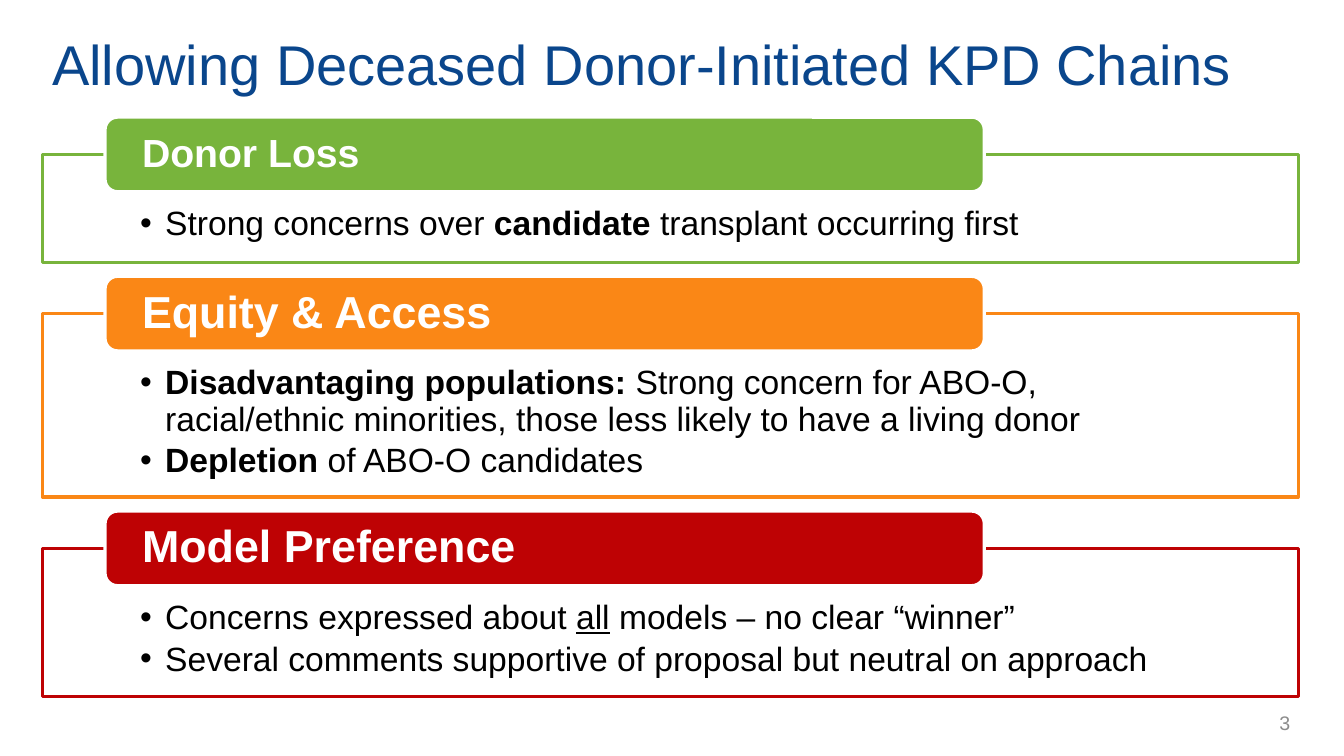
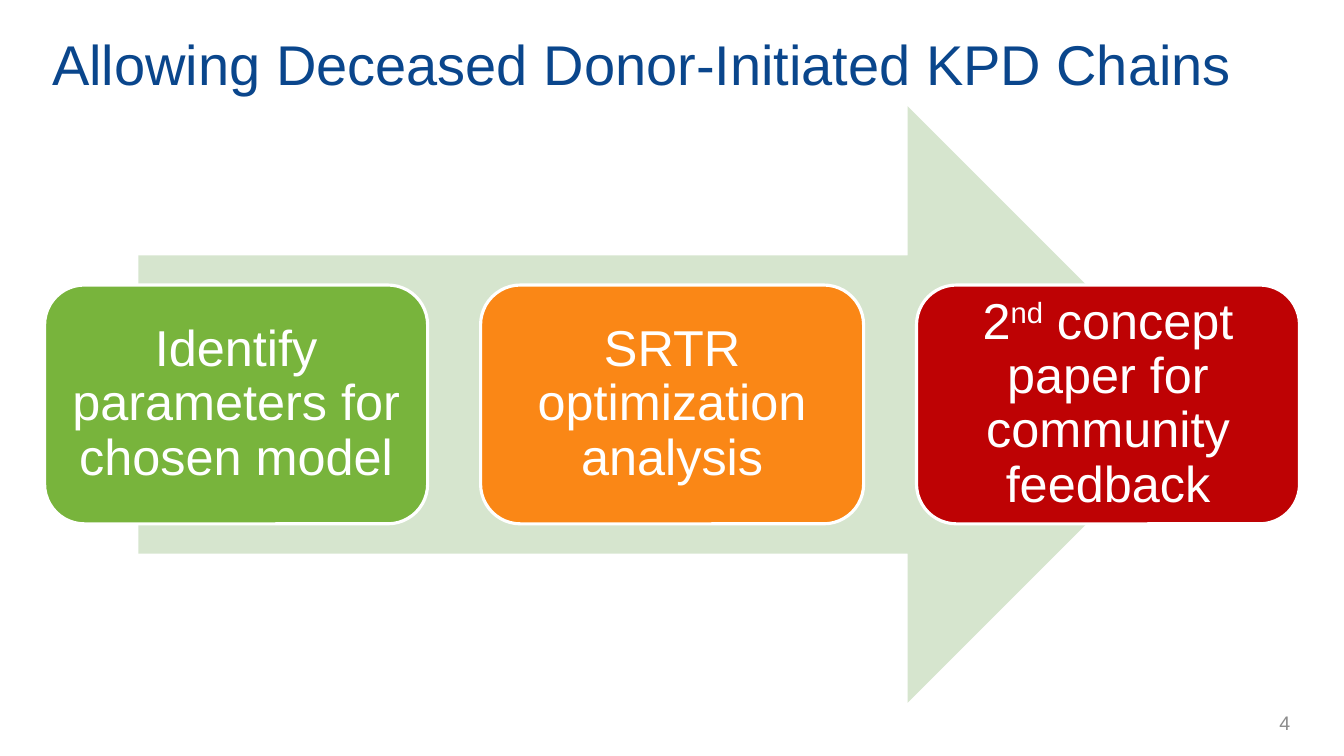
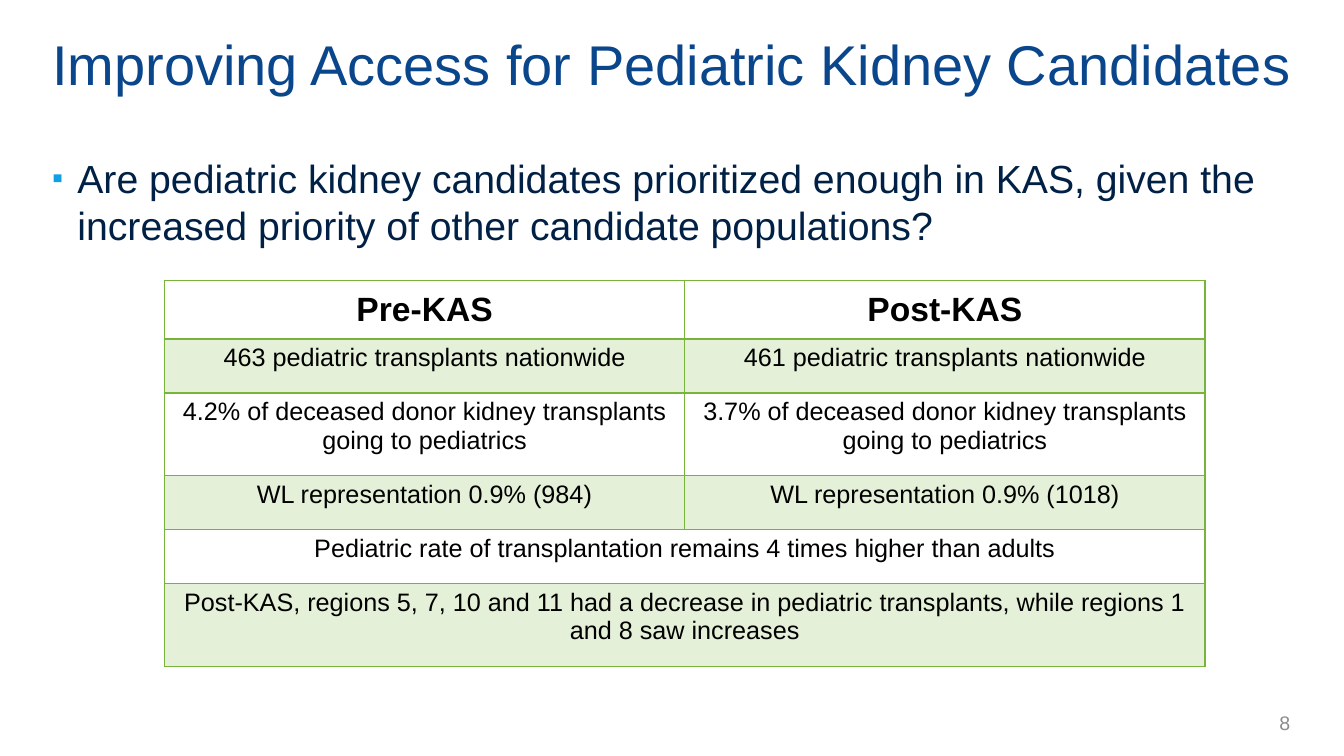
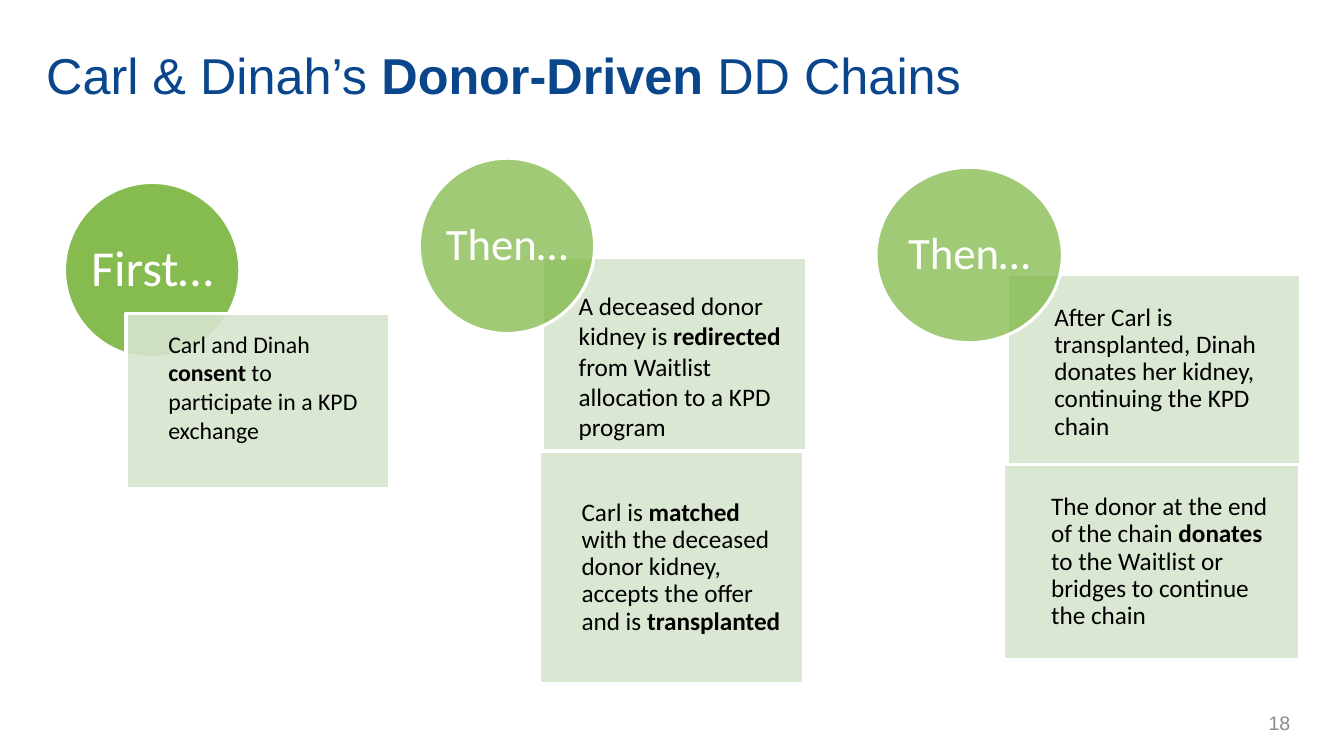
from dataclasses import dataclass
from typing import NamedTuple, Optional

import lxml.etree
import pptx
import pptx.dml.color
import pptx.enum.shapes
import pptx.enum.text
import pptx.oxml
import pptx.oxml.ns
import pptx.util

Pt = pptx.util.Pt
RGBColor = pptx.dml.color.RGBColor
SHAPE = pptx.enum.shapes.MSO_SHAPE
ANCHOR = pptx.enum.text.MSO_ANCHOR
ALIGN = pptx.enum.text.PP_ALIGN
qn = pptx.oxml.ns.qn

NAVY = RGBColor(0x0A, 0x46, 0x8C)
DARK_NAVY = RGBColor(0x00, 0x20, 0x45)
SKY = RGBColor(0x0F, 0xA0, 0xE4)
GREEN = RGBColor(0x78, 0xB4, 0x3C)
ORANGE = RGBColor(0xFA, 0x87, 0x16)
RED = RGBColor(0xBE, 0x02, 0x04)
SAGE = RGBColor(0xD6, 0xE5, 0xCE)
PALE_GREEN = RGBColor(0xE4, 0xF0, 0xD8)
GREY = RGBColor(0x8C, 0x8C, 0x8C)
WHITE = RGBColor(0xFF, 0xFF, 0xFF)
BLACK = RGBColor(0x00, 0x00, 0x00)

LINE_WIDTH = 2.25
TIGHT = 0.9


class Box(NamedTuple):
    left: float
    top: float
    width: float
    height: float

    def lengths(self) -> list:
        return [Pt(v) for v in self]


class Insets(NamedTuple):
    left: float = 7.2
    top: float = 3.6
    right: float = 7.2
    bottom: float = 3.6


class Run(NamedTuple):
    text: str
    bold: bool = False
    underline: bool = False
    superscript: bool = False


class Bullet(NamedTuple):
    char: str
    color: RGBColor
    percent: int = 100


class Style(NamedTuple):
    size: float
    color: RGBColor = BLACK
    font: str = "Arial"
    align: ALIGN = ALIGN.LEFT
    anchor: ANCHOR = ANCHOR.MIDDLE
    insets: Insets = Insets()
    spacing: float = 1.0
    after: float = 0
    bullet: Optional[Bullet] = None


@dataclass
class Section:
    heading: str
    heading_size: float
    color: RGBColor
    height: float
    points: list


@dataclass
class Step:
    runs: list
    color: RGBColor


@dataclass
class Card:
    box: Box
    runs: list
    insets: Insets
    size: float = 18
    spacing: float = TIGHT
    anchor: ANCHOR = ANCHOR.MIDDLE


@dataclass
class Circle:
    box: Box
    label: str
    size: float
    opacity: int


TITLE = Style(40, NAVY)
TITLE_BOX = Box(30.24, 11.5, 917.3, 67)
PAGE_NUMBER = Style(14, GREY, align=ALIGN.RIGHT)
PAGE_NUMBER_BOX = Box(766.1, 501.8, 162.7, 28.8)


def add_bullet(p, bullet: Bullet) -> None:
    pPr = p._p.get_or_add_pPr()
    pPr.set("marL", str(Pt(18)))
    pPr.set("indent", str(-Pt(18)))
    color = lxml.etree.SubElement(pPr, qn("a:buClr"))
    lxml.etree.SubElement(color, qn("a:srgbClr"), val=str(bullet.color))
    lxml.etree.SubElement(pPr, qn("a:buSzPct"), val=str(bullet.percent * 1000))
    lxml.etree.SubElement(pPr, qn("a:buFont"), typeface="Arial")
    lxml.etree.SubElement(pPr, qn("a:buChar"), char=bullet.char)


def write(tf, paragraphs: list, style: Style) -> None:
    for i, runs in enumerate(paragraphs):
        p = tf.add_paragraph() if i else tf.paragraphs[0]
        p.alignment = style.align
        p.line_spacing = style.spacing
        p.space_after = Pt(style.after)
        if style.bullet:
            add_bullet(p, style.bullet)
        for run in runs:
            r = p.add_run()
            r.text = run.text
            r.font.name = style.font
            r.font.size = Pt(style.size)
            r.font.color.rgb = style.color
            r.font.bold = run.bold
            r.font.underline = run.underline
            if run.superscript:
                r._r.get_or_add_rPr().set("baseline", "30000")


def fill_frame(tf, paragraphs: list, style: Style) -> None:
    tf.word_wrap = True
    tf.vertical_anchor = style.anchor
    tf.margin_left, tf.margin_top, tf.margin_right, tf.margin_bottom = [
        Pt(v) for v in style.insets
    ]
    write(tf, paragraphs, style)


def add_text(s, box: Box, paragraphs: list, style: Style) -> None:
    fill_frame(s.shapes.add_textbox(*box.lengths()).text_frame, paragraphs, style)


def add_shape(s, kind: SHAPE, box: Box, fill: RGBColor,
              line: Optional[RGBColor] = WHITE, opacity: int = 100):
    sp = s.shapes.add_shape(kind, *box.lengths())
    sp.shadow.inherit = False
    sp.fill.solid()
    sp.fill.fore_color.rgb = fill
    if opacity < 100:
        clr = sp._element.spPr.find(qn("a:solidFill")).find(qn("a:srgbClr"))
        lxml.etree.SubElement(clr, qn("a:alpha"), val=str(opacity * 1000))
    if line is None:
        sp.line.fill.background()
    else:
        sp.line.color.rgb = line
        sp.line.width = Pt(LINE_WIDTH)
    return sp


def add_slide(prs, title: list, number: int, box: Box = TITLE_BOX, style: Style = TITLE):
    s = prs.slides.add_slide(prs.slide_layouts[6])
    add_text(s, box, [title], style)
    add_text(s, PAGE_NUMBER_BOX, [[Run(str(number))]], PAGE_NUMBER)
    return s


def set_borders(cell, bottom: float, top: float) -> None:
    tcPr = cell._tc.get_or_add_tcPr()
    sides = (("lnL", 1), ("lnR", 1), ("lnT", top), ("lnB", bottom))
    for i, (side, width) in enumerate(sides):
        ln = lxml.etree.Element(qn(f"a:{side}"), w=str(Pt(width)))
        fill = lxml.etree.SubElement(ln, qn("a:solidFill"))
        lxml.etree.SubElement(fill, qn("a:srgbClr"), val=str(GREEN))
        tcPr.insert(i, ln)


def build_feedback(prs) -> None:
    s = add_slide(prs, [Run("Allowing Deceased Donor-Initiated KPD Chains")], 3)
    sections = [
        Section("Donor Loss", 28, GREEN, 77, [
            [Run("Strong concerns over "), Run("candidate ", bold=True),
             Run("transplant occurring first")],
        ]),
        Section("Equity & Access", 32, ORANGE, 131, [
            [Run("Disadvantaging populations: ", bold=True),
             Run("Strong concern for ABO-O, racial/ethnic minorities, "
                 "those less likely to have a living donor")],
            [Run("Depletion", bold=True), Run(" of ABO-O candidates")],
        ]),
        Section("Model Preference", 32, RED, 105.8, [
            [Run("Concerns expressed about "), Run("all", underline=True),
             Run(" models – no clear “winner”")],
            [Run("Several comments supportive of proposal but neutral on approach")],
        ]),
    ]
    body = Style(24, anchor=ANCHOR.TOP, insets=Insets(69.8, 37.4, 69.8, 13.7),
                 spacing=TIGHT, after=3.6, bullet=Bullet("•", BLACK))
    top, gap = 110.3, 36.7
    for section in sections:
        sp = add_shape(s, SHAPE.RECTANGLE, Box(30.24, top, 897.1, section.height),
                       WHITE, section.color)
        fill_frame(sp.text_frame, section.points, body)
        sp = add_shape(s, SHAPE.ROUNDED_RECTANGLE, Box(75.1, top - 26.6, 628, 53.2),
                       section.color)
        heading = Style(section.heading_size, WHITE, spacing=TIGHT,
                        insets=Insets(23.8, 0, 23.8, 0))
        fill_frame(sp.text_frame, [[Run(section.heading, bold=True)]], heading)
        top += section.height + gap


def build_next_steps(prs) -> None:
    s = add_slide(prs, [Run("Allowing Deceased Donor-Initiated KPD Chains")], 4)
    add_shape(s, SHAPE.RIGHT_ARROW, Box(98.8, 75.8, 762.6, 426.2), SAGE, None)
    steps = [
        Step([Run("Identify parameters for chosen model")], GREEN),
        Step([Run("SRTR optimization analysis")], ORANGE),
        Step([Run("2"), Run("nd", superscript=True),
              Run(" concept paper for community feedback")], RED),
    ]
    style = Style(36, WHITE, align=ALIGN.CENTER, spacing=TIGHT,
                  insets=Insets(10.8, 10.8, 10.8, 10.8))
    for i, step in enumerate(steps):
        sp = add_shape(s, SHAPE.ROUNDED_RECTANGLE,
                       Box(31.9 + 311.4 * i, 203.6, 273.6, 170.6), step.color)
        fill_frame(sp.text_frame, [step.runs], style)


def build_pediatric(prs) -> None:
    s = add_slide(prs, [Run("Improving Access for Pediatric Kidney Candidates")], 8)
    question = ("Are pediatric kidney candidates prioritized enough in KAS, "
                "given the increased priority of other candidate populations?")
    add_text(s, Box(30.24, 106.6, 897.1, 396), [[Run(question)]],
             Style(28, DARK_NAVY, anchor=ANCHOR.TOP, bullet=Bullet("▪", SKY, 80)))
    rows = [
        ("Pre-KAS", "Post-KAS"),
        ("463 pediatric transplants nationwide", "461 pediatric transplants nationwide"),
        ("4.2% of deceased donor kidney transplants going to pediatrics",
         "3.7% of deceased donor kidney transplants going to pediatrics"),
        ("WL representation 0.9% (984)", "WL representation 0.9% (1018)"),
        ("Pediatric rate of transplantation remains 4 times higher than adults",),
        ("Post-KAS, regions 5, 7, 10 and 11 had a decrease in pediatric transplants, "
         "while regions 1 and 8 saw increases",),
    ]
    heights = [42, 38.6, 59, 38.6, 38.6, 59]
    box = Box(117.4, 200.2, 743.4, sum(heights))
    table = s.shapes.add_table(len(rows), 2, *box.lengths()).table
    table.first_row = False
    table.horz_banding = False
    for column in table.columns:
        column.width = Pt(box.width / 2)
    for i, (texts, height) in enumerate(zip(rows, heights)):
        table.rows[i].height = Pt(height)
        header = i == 0
        if len(texts) == 1:
            table.cell(i, 0).merge(table.cell(i, 1))
        for j in range(2):
            cell = table.cell(i, j)
            if i % 2:
                cell.fill.solid()
                cell.fill.fore_color.rgb = PALE_GREEN
            else:
                cell.fill.background()
            set_borders(cell, bottom=2 if header else 1, top=2 if i == 1 else 1)
        for j, text in enumerate(texts):
            cell = table.cell(i, j)
            cell.vertical_anchor = ANCHOR.MIDDLE if header else ANCHOR.TOP
            write(cell.text_frame, [[Run(text, bold=header)]],
                  Style(24 if header else 18, align=ALIGN.CENTER))


def build_donor_chain(prs) -> None:
    title = [Run("Carl & Dinah’s "), Run("Donor-Driven", bold=True), Run(" DD Chains")]
    s = add_slide(prs, title, 18, Box(25.9, 31.7, 859, 67),
                  Style(36, NAVY, anchor=ANCHOR.TOP, insets=Insets(top=0)))
    items = [
        Card(Box(387.4, 183.6, 188.6, 138.2),
             [Run("A deceased donor kidney is "), Run("redirected", bold=True),
              Run(" from Waitlist allocation to a KPD program")],
             Insets(25.9, 23.8, 15.8, 0), spacing=1.0, anchor=ANCHOR.TOP),
        Card(Box(385.2, 322.6, 188.6, 165.6),
             [Run("Carl is "), Run("matched", bold=True),
              Run(" with the deceased donor kidney, accepts the offer and is "),
              Run("transplanted", bold=True)],
             Insets(30.2, 10, 10, 10)),
        Circle(Box(46.1, 130.3, 125.3, 125.3), "First…", 36, 90),
        Card(Box(719.3, 195.8, 209.5, 140.4),
             [Run("After Carl is transplanted, Dinah donates her kidney, "
                  "continuing the KPD chain")],
             Insets(33.8, 10, 10, 10)),
        Card(Box(717.1, 331.9, 211, 139),
             [Run("The donor at the end of the chain "), Run("donates", bold=True),
              Run(" to the Waitlist or bridges to continue the chain")],
             Insets(33.8, 10, 10, 10)),
        Circle(Box(625.7, 119.5, 133.2, 125.3), "Then…", 32, 70),
        Card(Box(90, 223.9, 188.6, 125.3),
             [Run("Carl and Dinah "), Run("consent", bold=True),
              Run(" to participate in a KPD exchange")],
             Insets(30.2, 9.4, 9.4, 30), size=17, spacing=1.0),
        Circle(Box(299.5, 113, 125.3, 125.3), "Then…", 32, 70),
    ]
    for item in items:
        if isinstance(item, Card):
            sp = add_shape(s, SHAPE.RECTANGLE, item.box, SAGE, opacity=90)
            style = Style(item.size, font="Calibri", anchor=item.anchor,
                          insets=item.insets, spacing=item.spacing)
            fill_frame(sp.text_frame, [item.runs], style)
        else:
            sp = add_shape(s, SHAPE.OVAL, item.box, GREEN, opacity=item.opacity)
            style = Style(item.size, WHITE, "Calibri", ALIGN.CENTER,
                          insets=Insets(0, 0, 0, 0), spacing=TIGHT)
            fill_frame(sp.text_frame, [[Run(item.label)]], style)


def main() -> None:
    prs = pptx.Presentation()
    prs.slide_width = Pt(960)
    prs.slide_height = Pt(540)
    build_feedback(prs)
    build_next_steps(prs)
    build_pediatric(prs)
    build_donor_chain(prs)
    prs.save("out.pptx")


if __name__ == "__main__":
    main()
